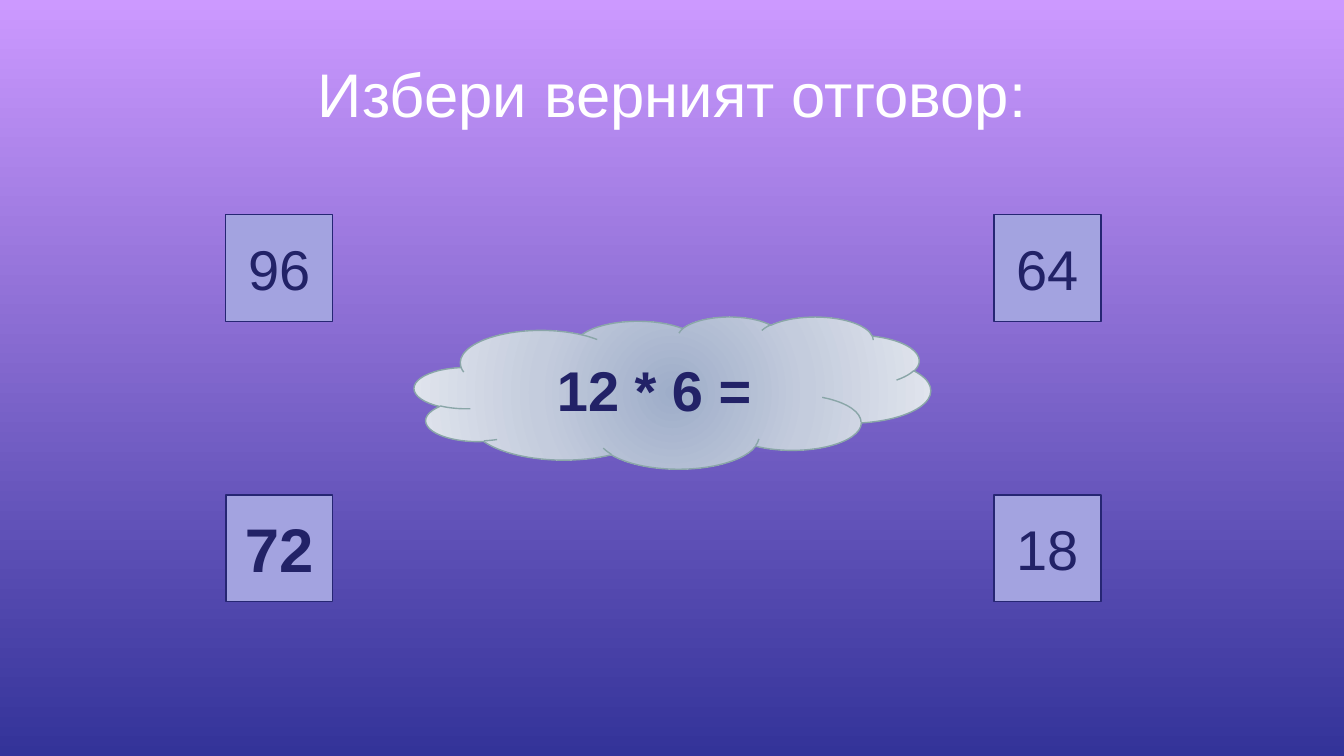
"""Build a multiplication quiz slide with four answer buttons."""
from copy import deepcopy

from lxml.etree import SubElement
from pptx import Presentation
from pptx.dml.color import RGBColor
from pptx.enum.shapes import MSO_SHAPE
from pptx.enum.text import MSO_ANCHOR, PP_ALIGN
from pptx.oxml.ns import qn
from pptx.util import Inches, Pt

WHITE = RGBColor(0xFF, 0xFF, 0xFF)
NAVY = RGBColor(0x22, 0x22, 0x67)
BORDER = RGBColor(0x26, 0x26, 0x73)
LAVENDER = RGBColor(0xA3, 0xA3, 0xE0)
SKY = (RGBColor(0xCC, 0x99, 0xFF), RGBColor(0x33, 0x33, 0x99))
CLOUD = (RGBColor(0x9E, 0xAD, 0xC9), RGBColor(0xC4, 0xCC, 0xDD), RGBColor(0xE2, 0xE6, 0xEE))
CLOUD_LINE = RGBColor(0x8A, 0xA6, 0xA8)

BUTTON_SIZE = 1.06
COLUMNS = (2.24, 9.86)
ROWS = (2.13, 4.91)
ANSWERS = (
    (dict(text="96", width=0.5), dict(text="64")),
    (dict(text="72", size=44, bold=True), dict(text="18")),
)


def write(sp, text, size=40, color=NAVY, bold=False, font="Arial"):
    tf = sp.text_frame
    tf.word_wrap = True
    tf.vertical_anchor = MSO_ANCHOR.MIDDLE
    p = tf.paragraphs[0]
    p.alignment = PP_ALIGN.CENTER
    r = p.add_run()
    r.text = text
    r.font.name = font
    r.font.size = Pt(size)
    r.font.bold = bold
    r.font.color.rgb = color


def color_stops(fill, colors):
    for i, (stop, color) in enumerate(zip(fill.gradient_stops, colors)):
        stop.position = i / (len(colors) - 1)
        stop.color.rgb = color


class QuizSlide:
    def __init__(self, prs):
        self.s = prs.slides.add_slide(prs.slide_layouts[6])

    def background(self, colors):
        fill = self.s.background.fill
        fill.gradient()
        fill.gradient_angle = 270
        color_stops(fill, colors)

    def title(self, text, left, top, width, height):
        box = self.s.shapes.add_textbox(*map(Inches, (left, top, width, height)))
        write(box, text, size=44, color=WHITE)

    def shape(self, kind, left, top, width, height, line, line_width=1):
        sp = self.s.shapes.add_shape(kind, *map(Inches, (left, top, width, height)))
        sp.shadow.inherit = False
        sp.line.color.rgb = line
        sp.line.width = Pt(line_width)
        return sp

    def button(self, left, top, text, size=40, bold=False, width=1):
        sp = self.shape(MSO_SHAPE.ACTION_BUTTON_CUSTOM, left, top,
                        BUTTON_SIZE, BUTTON_SIZE, BORDER, width)
        sp.fill.solid()
        sp.fill.fore_color.rgb = LAVENDER
        write(sp, text, size=size, bold=bold)

    def cloud(self, text, left, top, width, height):
        sp = self.shape(MSO_SHAPE.CLOUD, left, top, width, height, CLOUD_LINE)
        sp.fill.gradient()
        grad = sp._element.spPr.find(qn("a:gradFill"))
        stops = grad.find(qn("a:gsLst"))
        stops.insert(1, deepcopy(stops[0]))
        color_stops(sp.fill, CLOUD)
        grad.remove(grad.find(qn("a:lin")))
        radial = SubElement(grad, qn("a:path"), {"path": "circle"})
        SubElement(radial, qn("a:fillToRect"), dict.fromkeys("ltrb", "50000"))
        write(sp, text, bold=True)


def main():
    prs = Presentation()
    prs.slide_width, prs.slide_height = Inches(13.33), Inches(7.5)
    quiz = QuizSlide(prs)
    quiz.background(SKY)
    quiz.title("Избери верният отговор:", 0.67, 0.3, 12, 1.25)
    quiz.cloud("12 * 6 =", 4.11, 3.14, 5.12, 1.51)
    for top, answers in zip(ROWS, ANSWERS):
        for left, answer in zip(COLUMNS, answers):
            quiz.button(left, top, **answer)
    prs.save("out.pptx")


if __name__ == "__main__":
    main()
